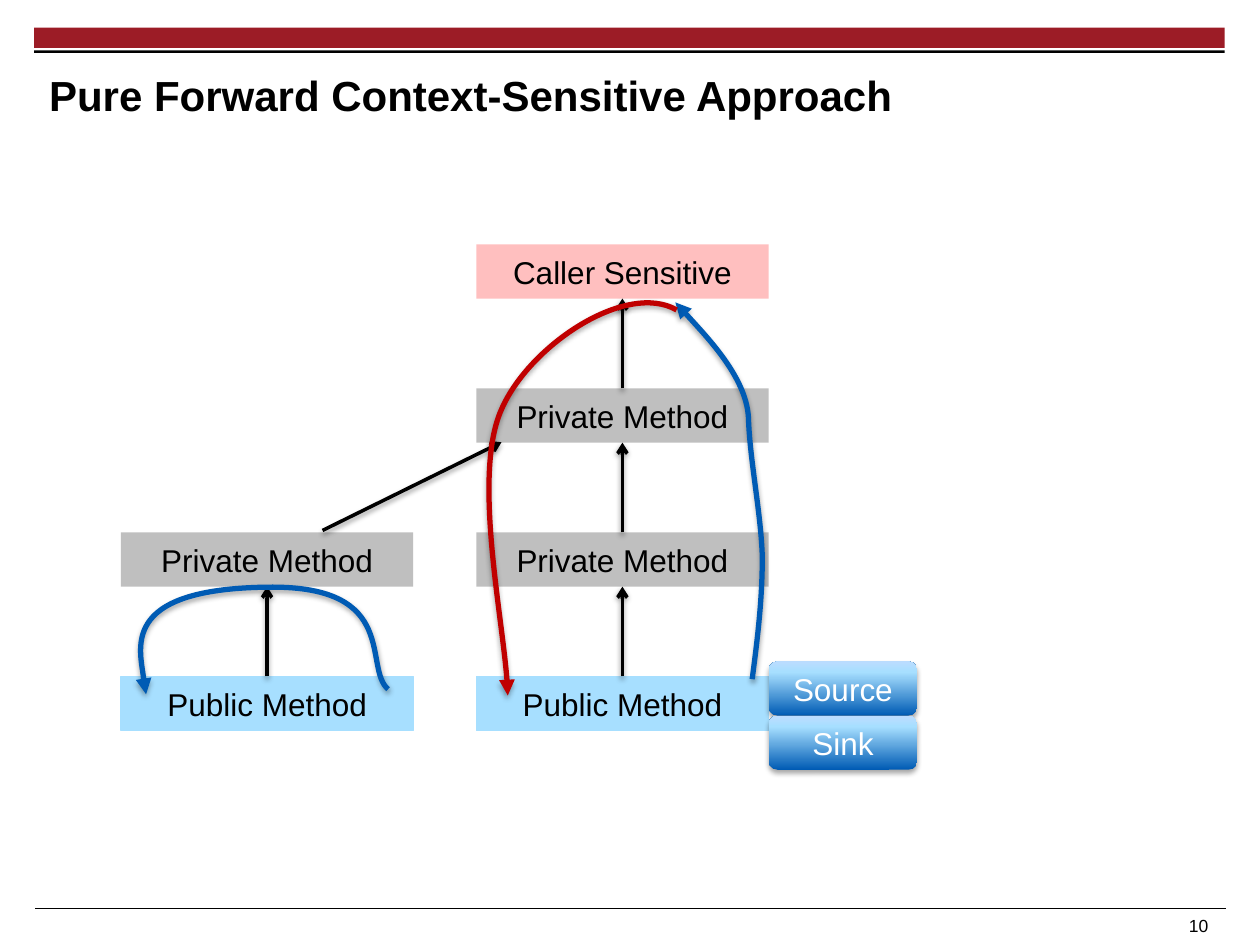
import copy
from dataclasses import dataclass
from typing import NamedTuple, Optional

import pptx
import pptx.dml.color
import pptx.enum.dml
import pptx.enum.shapes
import pptx.enum.text
import pptx.oxml.ns
import pptx.util
from lxml import etree

Inches = pptx.util.Inches
qn = pptx.oxml.ns.qn
SHAPES = pptx.enum.shapes.MSO_SHAPE
ALIGN = pptx.enum.text.PP_ALIGN
ANCHOR = pptx.enum.text.MSO_ANCHOR
TOP, BOTTOM = 0, 2


@dataclass(frozen=True)
class Theme:
    font: str = "Arial"
    black: str = "000000"
    white: str = "FFFFFF"
    banner: str = "9C1C26"
    sensitive: str = "FFBFBF"
    private: str = "BFBFBF"
    public: str = "A7DFFF"
    forward: str = "005BB4"
    back: str = "C00000"
    gradient: tuple = ((0, "005BB4"), (0.8, "A7DFFF"), (1, "BCDCFF"))
    title_size: int = 24
    label_size: int = 18
    number_size: int = 10
    arrow_width: float = 2
    flow_width: float = 3


THEME = Theme()


class Box(NamedTuple):
    left: float
    top: float
    width: float
    height: float


class Node(NamedTuple):
    label: str
    column: float
    row: int
    color: str


class Flow(NamedTuple):
    bounds: Box
    color: str
    start: tuple
    curves: tuple  # each: two control points and an end point


# Grid of the call graph
LEFT_COLUMN, RIGHT_COLUMN = 0.96, 3.78
FIRST_ROW, ROW_PITCH = 1.94, 1.143
NODE_WIDTH, NODE_HEIGHT = 2.32, 0.43

NODES = {
    "sensitive": Node("Caller Sensitive", RIGHT_COLUMN, 0, THEME.sensitive),
    "upper": Node("Private Method", RIGHT_COLUMN, 1, THEME.private),
    "lower": Node("Private Method", RIGHT_COLUMN, 2, THEME.private),
    "public": Node("Public Method", RIGHT_COLUMN, 3, THEME.public),
    "left private": Node("Private Method", LEFT_COLUMN, 2, THEME.private),
    "left public": Node("Public Method", LEFT_COLUMN, 3, THEME.public),
}
CALLS = (("public", "lower"), ("lower", "upper"), ("upper", "sensitive"),
         ("left public", "left private"))
FLOWS = (
    Flow(Box(5.36, 2.4, 0.69, 2.99), THEME.forward, (5.97, 5.39),
         (((6.01, 5.08), (6.05, 4.77), (6.05, 4.42)),
          ((6.04, 4.07), (5.95, 3.65), (5.94, 3.31)),
          ((5.92, 2.98), (5.36, 2.4), (5.36, 2.4)))),
    Flow(Box(3.89, 2.4, 1.49, 3.11), THEME.back, (5.37, 2.46),
         (((4.97, 2.23), (4.2, 2.74), (3.98, 3.25)),
          ((3.75, 3.76), (4.02, 5.04), (4.03, 5.52)))),
    Flow(Box(1.14, 4.66, 1.94, 0.85), THEME.forward, (3.08, 5.47),
         (((2.88, 5.3), (3.18, 4.65), (2.14, 4.66)),
          ((0.91, 4.67), (1.16, 5.51), (1.16, 5.51)))),
)


def rgb(color: str):
    return pptx.dml.color.RGBColor.from_string(color)


def apply_format(target, values: dict) -> None:
    for name, value in values.items():
        setattr(target, name, value)


def add_shadow(shape, opacity: int, distance: float) -> None:
    effects = etree.SubElement(shape.element.spPr, qn("a:effectLst"))
    shadow = etree.SubElement(
        effects, qn("a:outerShdw"), blurRad=str(pptx.util.Pt(3.1)),
        dist=str(pptx.util.Pt(distance)), dir="5400000", rotWithShape="0")
    color = etree.SubElement(shadow, qn("a:srgbClr"), val=THEME.black)
    etree.SubElement(color, qn("a:alpha"), val=str(opacity * 1000))


def set_line(shape, color: str, width: float, arrow: Optional[str] = None) -> None:
    shape.line.color.rgb = rgb(color)
    shape.line.width = pptx.util.Pt(width)
    if arrow:
        etree.SubElement(shape.element.spPr.find(qn("a:ln")), qn("a:tailEnd"), type=arrow)


def write_text(shape, text: str, size: int, color: str, frame_format: dict,
               alignment=ALIGN.LEFT, bold: bool = False) -> None:
    apply_format(shape.text_frame, {"word_wrap": True, **frame_format})
    paragraph = shape.text_frame.paragraphs[0]
    paragraph.alignment = alignment
    run = paragraph.add_run()
    run.text = text
    apply_format(run.font, {"name": THEME.font, "size": pptx.util.Pt(size), "bold": bold})
    run.font.color.rgb = rgb(color)


def add_block(slide, box: Box, color: Optional[str], preset=SHAPES.RECTANGLE):
    shape = slide.shapes.add_shape(preset, *map(Inches, box))
    if color:
        shape.fill.solid()
        shape.fill.fore_color.rgb = rgb(color)
    shape.line.fill.background()
    return shape


def add_label(shape, text: str, color: str) -> None:
    write_text(shape, text, THEME.label_size, color,
               {"vertical_anchor": ANCHOR.MIDDLE}, ALIGN.CENTER)


def add_node(slide, node: Node):
    top = FIRST_ROW + node.row * ROW_PITCH
    shape = add_block(slide, Box(node.column, top, NODE_WIDTH, NODE_HEIGHT), node.color)
    shape.shadow.inherit = False
    if node.color == THEME.public:
        set_line(shape, THEME.public, 0.75)
    add_label(shape, node.label, THEME.black)
    return shape


def add_straight(slide, start: tuple, end: tuple):
    return slide.shapes.add_connector(
        pptx.enum.shapes.MSO_CONNECTOR.STRAIGHT, *map(Inches, start + end))


def style_call(connector) -> None:
    set_line(connector, THEME.black, THEME.arrow_width, "arrow")
    add_shadow(connector, 38, 1.6)


def add_flow(slide, flow: Flow) -> None:
    left, top, width, height = map(Inches, flow.bounds)
    builder = slide.shapes.build_freeform(left, top)
    builder.add_line_segments([(left + width, top + height)], close=False)
    shape = builder.convert_to_shape()
    outline = next(shape.element.iter(qn("a:path")))
    for step in list(outline):
        outline.remove(step)
    for tag, points in (("a:moveTo", (flow.start,)),
                        *(("a:cubicBezTo", curve) for curve in flow.curves)):
        step = etree.SubElement(outline, qn(tag))
        for x, y in points:
            etree.SubElement(step, qn("a:pt"), x=str(Inches(x) - left), y=str(Inches(y) - top))
    shape.fill.background()
    set_line(shape, flow.color, THEME.flow_width, "triangle")
    add_shadow(shape, 35, 1.8)


def add_tag(slide, text: str, top: float) -> None:
    shape = add_block(slide, Box(6.1, top, 1.18, NODE_HEIGHT), None, SHAPES.ROUNDED_RECTANGLE)
    shape.fill.gradient()
    shape.fill.gradient_angle = 90
    stop_list = next(shape.element.iter(qn("a:gsLst")))
    stop_list.append(copy.deepcopy(stop_list[-1]))
    for stop, (position, color) in zip(shape.fill.gradient_stops, THEME.gradient):
        stop.position = position
        stop.color.rgb = rgb(color)
    add_shadow(shape, 35, 1.8)
    add_label(shape, text, THEME.white)


def main() -> None:
    presentation = pptx.Presentation()
    apply_format(presentation, {"slide_width": Inches(10), "slide_height": Inches(7.5)})
    slide = presentation.slides.add_slide(presentation.slide_layouts[6])

    # Header bars and footer rule
    for box, color in ((Box(0.27, 0.22, 9.45, 0.16), THEME.banner),
                       (Box(0.27, 0.4, 9.45, 0.02), THEME.black)):
        add_block(slide, box, color).shadow.inherit = False
    rule = add_straight(slide, (0.28, 7.21), (9.73, 7.21))
    set_line(rule, THEME.black, 0.6)
    etree.SubElement(rule.element.spPr, qn("a:effectLst"))

    # Slide number and title
    number = slide.shapes.add_textbox(*map(Inches, (1.85, 7.21, 7.88, 0.25)))
    write_text(number, "10", THEME.number_size, THEME.black,
               {"margin_right": Inches(0.14)}, ALIGN.RIGHT)
    title = slide.shapes.add_textbox(*map(Inches, (0.39, 0.44, 9.33, 0.63)))
    margins = {f"margin_{side}": 0 for side in ("left", "top", "right", "bottom")}
    write_text(title, "Pure Forward Context-Sensitive Approach", THEME.title_size,
               THEME.black, {"vertical_anchor": ANCHOR.MIDDLE, **margins}, bold=True)

    # Call graph
    shapes = {name: add_node(slide, node) for name, node in NODES.items()}
    for caller, callee in CALLS:
        connector = add_straight(slide, (0, 0), (0, 0))
        connector.begin_connect(shapes[caller], TOP)
        connector.end_connect(shapes[callee], BOTTOM)
        style_call(connector)
    style_call(add_straight(slide, (2.56, 4.21), (3.98, 3.51)))

    # Data flows, then source and sink tags
    for flow in FLOWS:
        add_flow(slide, flow)
    for index, text in enumerate(("Source", "Sink")):
        add_tag(slide, text, 5.25 + index * NODE_HEIGHT)

    presentation.save("out.pptx")


if __name__ == "__main__":
    main()
